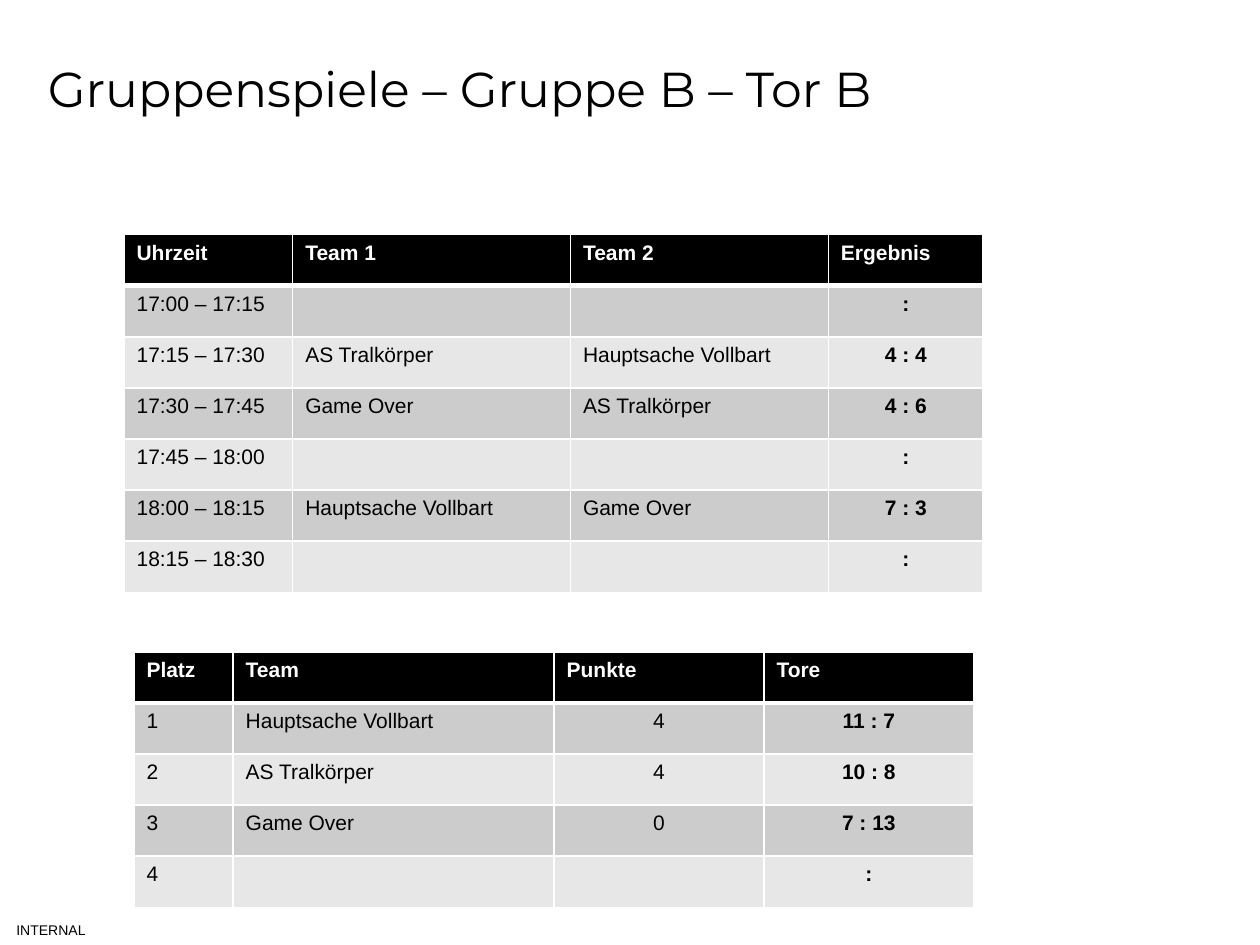
from lxml import etree
from pptx import Presentation
from pptx import util as u
from pptx.dml import color
from pptx.enum import text
from pptx.oxml import ns

COLORS = {"ink": "000000", "paper": "FFFFFF", "odd": "CCCCCC", "even": "E7E7E7"}
ROW_HEIGHT = 1.03
GAMES = [
    ("Uhrzeit", "Team 1", "Team 2", "Ergebnis"),
    ("17:00 – 17:15", "", "", ":"),
    ("17:15 – 17:30", "AS Tralkörper", "Hauptsache Vollbart", "4 : 4"),
    ("17:30 – 17:45", "Game Over", "AS Tralkörper", "4 : 6"),
    ("17:45 – 18:00", "", "", ":"),
    ("18:00 – 18:15", "Hauptsache Vollbart", "Game Over", "7 : 3"),
    ("18:15 – 18:30", "", "", ":"),
]
STANDINGS = [
    ("Platz", "Team", "Punkte", "Tore"),
    ("1", "Hauptsache Vollbart", "4", "11 : 7"),
    ("2", "AS Tralkörper", "4", "10 : 8"),
    ("3", "Game Over", "0", "7 : 13"),
    ("4", "", "", ":"),
]


def rgb(name):
    """Return the named colour."""
    return color.RGBColor.from_string(COLORS[name])


def apply(target, values):
    """Set each attribute in a dict of format values."""
    for name, value in values.items():
        setattr(target, name, value)


def write(paragraph, words, size, font="Arial", ink="ink", bold=False, centred=False):
    """Write one formatted run into a paragraph."""
    paragraph.alignment = text.PP_ALIGN.CENTER if centred else text.PP_ALIGN.LEFT
    run = paragraph.add_run()
    run.text = words
    apply(run.font, {"name": font, "size": u.Pt(size), "bold": bold})
    run.font.color.rgb = rgb(ink)


def add_borders(cell, widths):
    """Draw white cell borders with the given widths in points."""
    properties = cell._tc.get_or_add_tcPr()
    for side, width in widths.items():
        line = etree.SubElement(properties, ns.qn(f"a:ln{side}"), w=str(u.Pt(width)))
        fill = etree.SubElement(line, ns.qn("a:solidFill"))
        etree.SubElement(fill, ns.qn("a:srgbClr"), val=COLORS["paper"])


def add_title(slide, words):
    """Place and write the title."""
    title = slide.shapes.title
    apply(title, {"left": u.Cm(0.71), "top": u.Cm(0.03),
                  "width": u.Cm(20), "height": u.Cm(3.48)})
    apply(title.text_frame, {"vertical_anchor": text.MSO_ANCHOR.MIDDLE, "word_wrap": True})
    write(title.text_frame.paragraphs[0], words, 28, "Montserrat")


def add_label(slide, words):
    """Add the classification label in the bottom left corner."""
    label = slide.shapes.add_textbox(u.Cm(0), u.Cm(18.44), u.Cm(2.06), u.Cm(0.61))
    apply(label.text_frame, {
        "margin_left": 0, "margin_right": 0, "margin_top": 0, "margin_bottom": 0,
        "vertical_anchor": text.MSO_ANCHOR.MIDDLE, "word_wrap": True})
    write(label.text_frame.paragraphs[0], words, 8, centred=True)


def add_results_table(slide, left, top, widths, rows, centred_columns):
    """Add a banded table with a black header and a bold last column."""
    frame = slide.shapes.add_table(len(rows), len(widths), u.Cm(left), u.Cm(top),
                                   u.Cm(sum(widths)), u.Cm(ROW_HEIGHT * len(rows)))
    table = frame.table
    for column, width in zip(table.columns, widths):
        column.width = u.Cm(width)
    for i, row in enumerate(rows):
        table.rows[i].height = u.Cm(ROW_HEIGHT)
        header = i == 0
        band = "ink" if header else "odd" if i % 2 else "even"
        for j, words in enumerate(row):
            cell = table.cell(i, j)
            add_borders(cell, {"L": 1, "R": 1, "T": 3 if i == 1 else 1, "B": 3 if header else 1})
            cell.fill.solid()
            cell.fill.fore_color.rgb = rgb(band)
            if words:
                write(cell.text_frame.paragraphs[0], words, 12,
                      ink="paper" if header else "ink",
                      bold=header or j == len(row) - 1,
                      centred=not header and j in centred_columns)


def main():
    """Build the group B slide."""
    presentation = Presentation()
    apply(presentation, {"slide_width": u.Cm(25.4), "slide_height": u.Cm(19.05)})
    slide = presentation.slides.add_slide(presentation.slide_layouts[5])
    add_label(slide, "INTERNAL")
    add_title(slide, "Gruppenspiele – Gruppe B – Tor B")
    add_results_table(slide, 2.5, 4.73, (3.4, 5.6, 5.2, 3.12), GAMES, {3})
    add_results_table(slide, 2.7, 13.14, (2, 6.47, 4.23, 4.23), STANDINGS, {2, 3})
    presentation.save("out.pptx")


if __name__ == "__main__":
    main()
